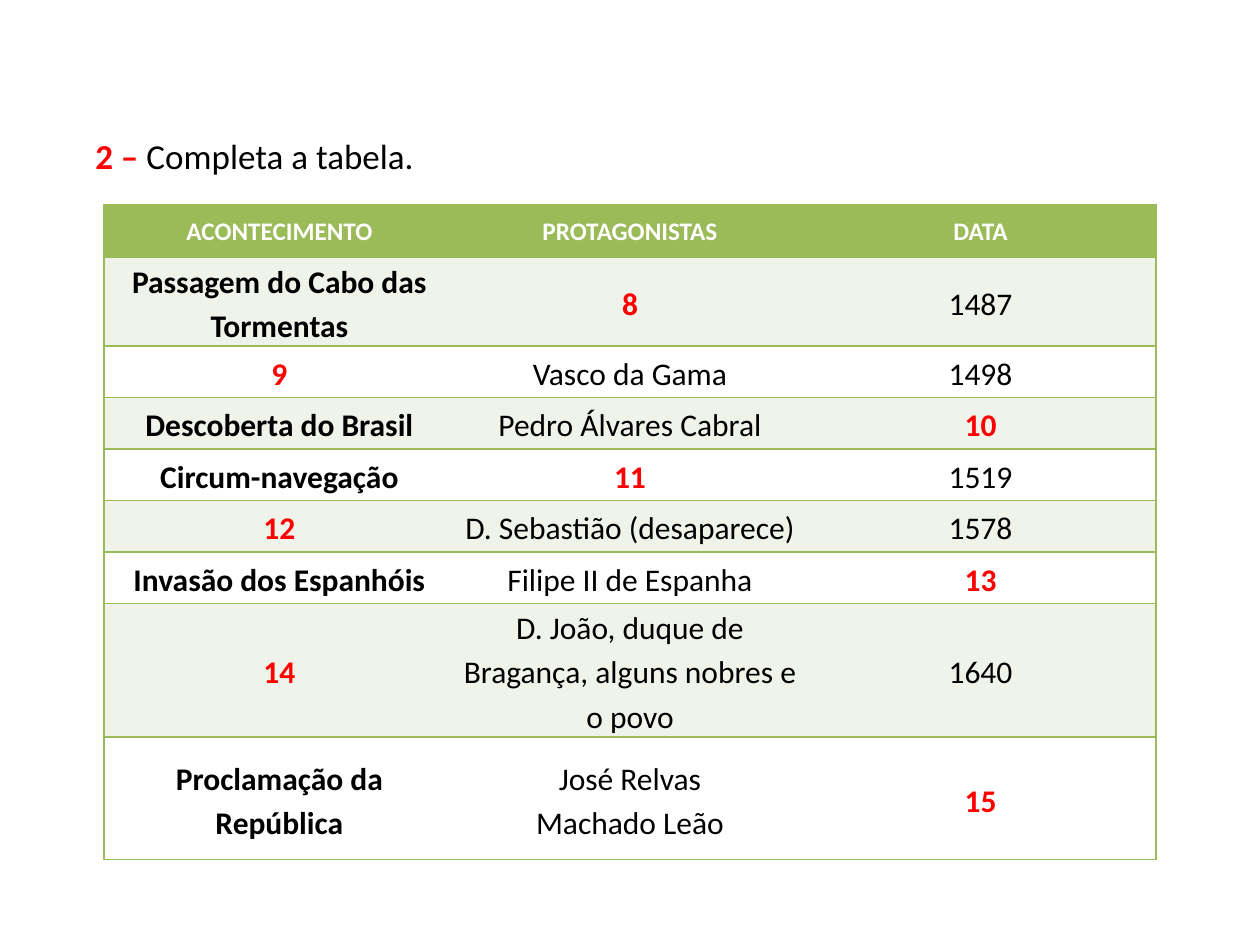
from lxml.etree import SubElement
from pptx import Presentation
from pptx.dml.color import RGBColor
from pptx.enum.text import MSO_ANCHOR, MSO_AUTO_SIZE, PP_ALIGN
from pptx.oxml.ns import qn
from pptx.util import Pt

FONT = "Calibri"
GREEN = RGBColor(0x9B, 0xBB, 0x59)
PALE = RGBColor(0xEF, 0xF3, 0xEA)
WHITE = RGBColor(0xFF, 0xFF, 0xFF)
BLACK = RGBColor(0, 0, 0)
RED = RGBColor(0xFF, 0, 0)

HEADERS = ["acontecimento", "protagonistas", "data"]
EVENTS = [
    ("Passagem do Cabo das Tormentas", "8", "1487"),
    ("9", "Vasco da Gama", "1498"),
    ("Descoberta do Brasil", "Pedro Álvares Cabral", "10"),
    ("Circum-navegação", "11", "1519"),
    ("12", "D. Sebastião (desaparece)", "1578"),
    ("Invasão dos Espanhóis", "Filipe II de Espanha", "13"),
    ("14", "D. João, duque de Bragança, alguns nobres e o povo", "1640"),
    ("Proclamação da República", "José Relvas\nMachado Leão", "15"),
]
ROW_HEIGHTS = [30.5, 50.5] + [29.4] * 5 + [76.5, 70]


def add_run(p, text, size, color, bold):
    """Add one formatted run to a paragraph and return it."""
    r = p.add_run()
    r.text = text
    r.font.name = FONT
    r.font.size = Pt(size)
    r.font.bold = bold
    r.font.color.rgb = color
    return r


def set_borders(cell, sides):
    """Draw green lines on the given sides of a cell and clear the others."""
    tc_pr = cell._tc.get_or_add_tcPr()
    for side in "LRTB":
        ln = SubElement(tc_pr, qn("a:ln" + side), w=str(Pt(1)))
        if side in sides:
            fill = SubElement(ln, qn("a:solidFill"))
            SubElement(fill, qn("a:srgbClr"), val=str(GREEN))
        else:
            SubElement(ln, qn("a:noFill"))


def fill_cell(cell, text, fill, color, bold):
    """Set the fill of a cell and write its centred lines; return the runs."""
    cell.fill.solid()
    cell.fill.fore_color.rgb = fill
    cell.margin_left = cell.margin_right = Pt(4.5)
    cell.margin_top = cell.margin_bottom = Pt(0)
    tf = cell.text_frame
    runs = []
    for i, line in enumerate(text.split("\n")):
        p = tf.add_paragraph() if i else tf.paragraphs[0]
        p.alignment = PP_ALIGN.CENTER
        p.line_spacing = 1.15
        runs.append(add_run(p, line, 18, color, bold))
    return runs


def add_question(s, x, y, w, h):
    """Place the numbered instruction in the given box."""
    tf = s.shapes.add_textbox(Pt(x), Pt(y), Pt(w), Pt(h)).text_frame
    tf.word_wrap = True
    tf.auto_size = MSO_AUTO_SIZE.SHAPE_TO_FIT_TEXT
    p = tf.paragraphs[0]
    add_run(p, "2 – ", 20, RED, True)
    add_run(p, "Completa a tabela.", 20, BLACK, False)


def add_events_table(s, x, y, w):
    """Place the table of events, with red numbers for the gaps to complete."""
    rows = [HEADERS] + EVENTS
    table = s.shapes.add_table(len(rows), len(HEADERS), Pt(x), Pt(y),
                               Pt(w), Pt(sum(ROW_HEIGHTS))).table
    for col in table.columns:
        col.width = Pt(w / len(HEADERS))
    for i, values in enumerate(rows):
        table.rows[i].height = Pt(ROW_HEIGHTS[i])
        for j, text in enumerate(values):
            cell = table.cell(i, j)
            set_borders(cell, ("LTB", "TB", "RTB")[j])
            if i == 0:
                for r in fill_cell(cell, text, GREEN, WHITE, True):
                    r._r.get_or_add_rPr().set("cap", "small")
                continue
            cell.vertical_anchor = MSO_ANCHOR.MIDDLE
            gap = text.isdigit() and len(text) < 3
            fill_cell(cell, text, PALE if i % 2 else WHITE,
                      RED if gap else BLACK, gap or j == 0)


def main():
    """Build the slide and save it."""
    prs = Presentation()
    prs.slide_width, prs.slide_height = Pt(720), Pt(540)
    s = prs.slides.add_slide(prs.slide_layouts[6])
    add_events_table(s, 59.5, 116.8, 601)
    add_question(s, 47.4, 73.5, 273, 31.5)
    prs.save("out.pptx")


if __name__ == "__main__":
    main()
